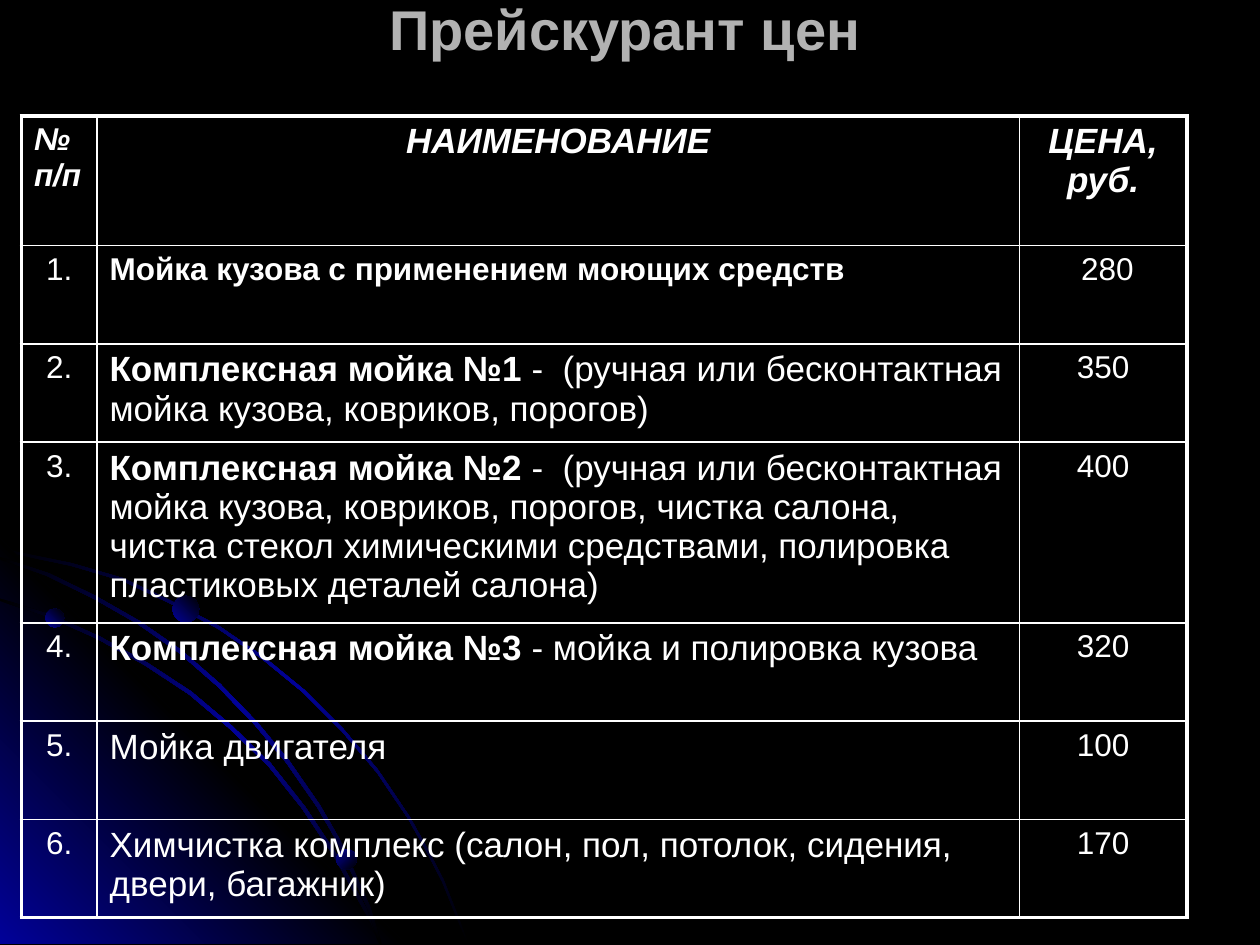
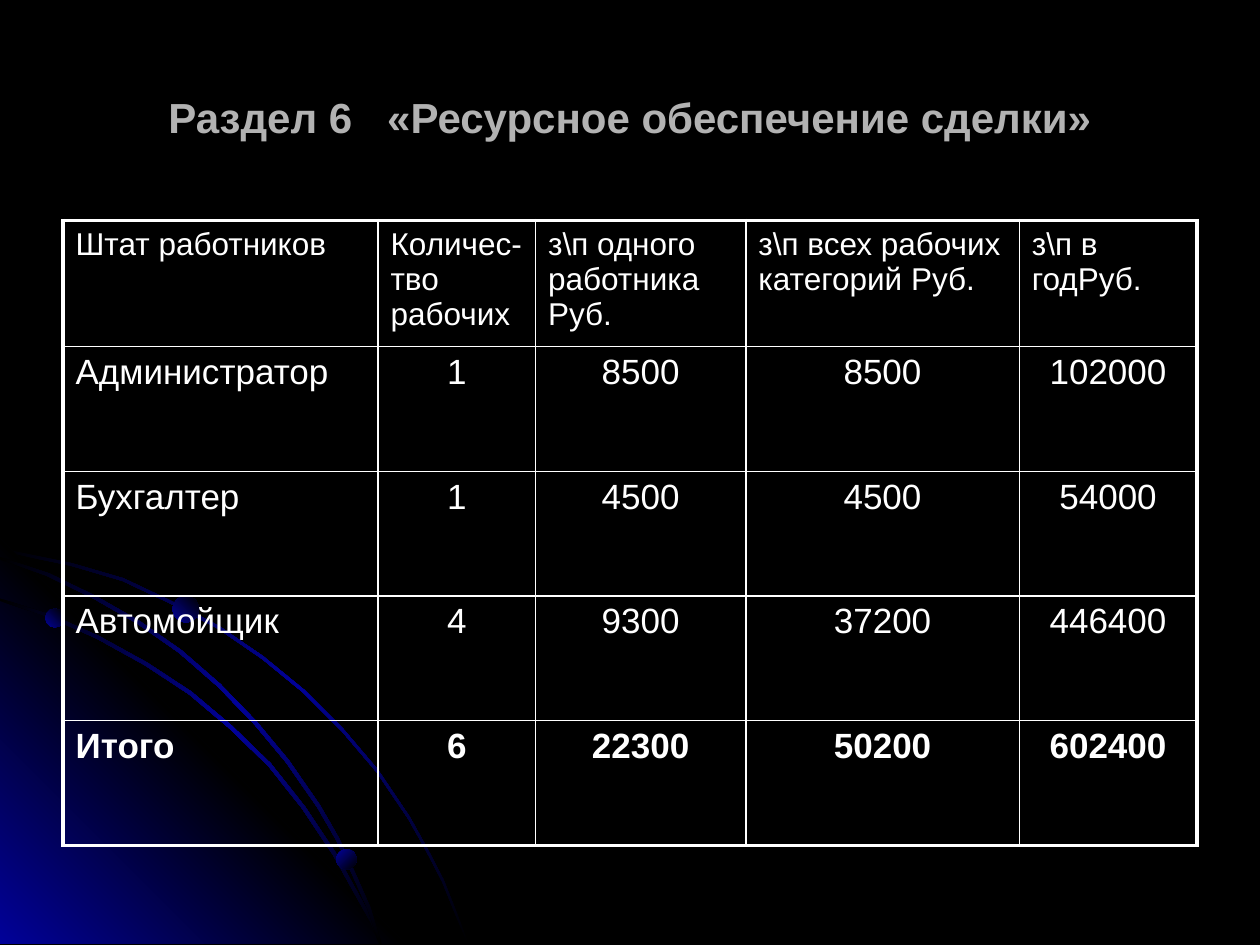
from lxml import etree
from pptx import Presentation
from pptx import util as u
from pptx.dml.color import RGBColor
from pptx.enum import shapes, text
from pptx.oxml.ns import qn

PX = 9144  # 100 px to the inch
SLIDE_WIDTH, SLIDE_HEIGHT = 1000, 750
FONT = "Arial"
BLACK = RGBColor(0x00, 0x00, 0x00)
BLUE = RGBColor(0x01, 0x01, 0x99)
GRAY = RGBColor(0xB2, 0xB2, 0xB2)
WHITE = RGBColor(0xFF, 0xFF, 0xFF)
LEFT, CENTER = text.PP_ALIGN.LEFT, text.PP_ALIGN.CENTER
OUTER_LINE, INNER_LINE = 2.25, 1
PLAIN_TABLE_STYLE = "{2D5ABB26-0587-4C30-8999-92F81FD0307C}"

# Background art: upper edge of each arc, its thickness, all relative to the art box
ART_BOX = (0, 427, 372, 322)
HIGH_ARC = [(0, 8), (28, 14), (57, 20), (98, 32), (136, 50), (174, 70), (209, 94),
            (242, 121), (272, 151), (300, 184), (325, 221), (339, 246), (352, 271),
            (362, 296), (372, 322)]
LOW_ARC = [(0, 48), (41, 61), (79, 78), (117, 99), (152, 122), (184, 149), (215, 179),
           (242, 213), (266, 249), (286, 285), (296, 303), (303, 322)]
MIDDLE_ARC = [(0, 15), (39, 28), (76, 46), (111, 66), (144, 89), (175, 116), (204, 146),
              (229, 176), (254, 212), (269, 238), (282, 266), (294, 293), (303, 322)]
BALLS = [(36, 56, 15, 315), (267, 247, 16, 45), (137, 46, 21, 315)]

PRICE_COLUMNS = [60, 732, 133]
PRICE_ROWS = [103, 78, 78, 134, 78, 78, 78]
PRICE_HEADER = ["№ п/п", "НАИМЕНОВАНИЕ", "ЦЕНА, руб."]
# Bold part of the service name, plain part, size, price
SERVICES = [
    ("Мойка кузова с применением моющих средств", "", 18, " 280"),
    ("Комплексная мойка №1",
     " -  (ручная или бесконтактная мойка кузова, ковриков, порогов)", 20, "350"),
    ("Комплексная мойка №2",
     " -  (ручная или бесконтактная мойка кузова, ковриков, порогов, чистка салона, "
     "чистка стекол химическими средствами, полировка пластиковых деталей салона)",
     20, "400"),
    ("Комплексная мойка №3", " - мойка и полировка кузова", 20, "320"),
    ("", "Мойка двигателя", 20, "100"),
    ("", "Химчистка комплекс (салон, пол, потолок, сидения, двери, багажник)", 20, "170"),
]

STAFF_COLUMNS = [250, 125, 167, 217, 141]
STAFF_ROW_HEIGHT = 99
STAFF = [
    ["Штат работников", "Количес-тво рабочих", "з\\п одного работника Руб.",
     "з\\п всех рабочих категорий Руб.", "з\\п в годРуб."],
    ["Администратор", "1", "8500", "8500", "102000"],
    ["Бухгалтер", "1", "4500", "4500", "54000"],
    ["Автомойщик", "4", "9300", "37200", "446400"],
    ["Итого", "6", "22300", "50200", "602400"],
]


def px(*lengths):
    return [u.Emu(length * PX) for length in lengths]


def format_run(run, size, color=WHITE, bold=False, italic=False):
    font = run.font
    font.name, font.size = FONT, u.Pt(size)
    font.bold, font.italic = bold, italic
    font.color.rgb = color


def write(frame, content, size, align=LEFT, **style):
    paragraph = frame.paragraphs[0]
    paragraph.text = content
    paragraph.alignment = align
    for run in paragraph.runs:
        format_run(run, size, **style)


def paint_gradient(shape, colors, angle):
    """Spread the colours evenly; the angle runs clockwise."""
    shape.shadow.inherit = False
    shape.line.fill.background()
    shape.fill.gradient()
    shape.fill.gradient_angle = 360 - angle
    stops = shape.element.spPr.find(qn("a:gradFill")).find(qn("a:gsLst"))
    for stop in list(stops):
        stops.remove(stop)
    for index, color in enumerate(colors):
        position = index * 100000 // (len(colors) - 1)
        stop = etree.SubElement(stops, qn("a:gs"), pos=str(position))
        etree.SubElement(stop, qn("a:srgbClr"), val=str(color))


def add_outline(slide, box, points, colors, angle):
    builder = slide.shapes.build_freeform(*points[0], scale=PX)
    builder.add_line_segments(points[1:], close=True)
    paint_gradient(builder.convert_to_shape(*px(*box[:2])), colors, angle)


def add_arc(slide, box, edge, shift_x, shift_y):
    lower_edge = [(max(x - shift_x, 0), min(y + shift_y, box[3])) for x, y in edge]
    add_outline(slide, box, edge + lower_edge[::-1], [BLACK, BLUE, BLACK], 45)


def add_art(slide, box):
    left, top, _, height = box
    add_arc(slide, box, HIGH_ARC, 1, 2)
    # Glowing corner
    corner = [(0, 0), (height, height), (0, height)]
    add_outline(slide, box, corner, [BLUE, BLACK, BLUE], 315)
    add_arc(slide, box, LOW_ARC, 2, 2)
    add_arc(slide, box, MIDDLE_ARC, 2, 2)
    for x, y, size, angle in BALLS:
        ball = slide.shapes.add_shape(shapes.MSO_SHAPE.OVAL,
                                      *px(left + x, top + y, size, size))
        paint_gradient(ball, [BLUE, BLACK], angle)


def add_title(slide, box, content, size):
    frame = slide.shapes.add_textbox(*px(*box)).text_frame
    frame.word_wrap = True
    frame.vertical_anchor = text.MSO_ANCHOR.MIDDLE
    write(frame, content, size, CENTER, color=GRAY, bold=True)


def set_border(cell, side, width):
    properties = cell._tc.get_or_add_tcPr()
    line = etree.SubElement(properties, qn("a:ln" + side), w=str(u.Pt(width)))
    fill = etree.SubElement(line, qn("a:solidFill"))
    etree.SubElement(fill, qn("a:srgbClr"), val=str(WHITE))


def add_grid(slide, left, top, columns, rows):
    """Add an unfilled table with a thick frame and thin inner lines."""
    frame = slide.shapes.add_table(len(rows), len(columns),
                                   *px(left, top, sum(columns), sum(rows)))
    table = frame.table
    table.first_row = table.horz_banding = False
    table._tbl.tblPr.find(qn("a:tableStyleId")).text = PLAIN_TABLE_STYLE
    for column, width in zip(table.columns, columns):
        column.width = u.Emu(width * PX)
    for row, height in zip(table.rows, rows):
        row.height = u.Emu(height * PX)
    last_row, last_column = len(rows) - 1, len(columns) - 1
    for r in range(len(rows)):
        for c in range(len(columns)):
            cell = table.cell(r, c)
            on_frame = {"L": c == 0, "R": c == last_column, "T": r == 0, "B": r == last_row}
            for side, is_outer in on_frame.items():
                set_border(cell, side, OUTER_LINE if is_outer else INNER_LINE)
            cell.fill.background()
    return table


def add_price_table(slide, left, top):
    table = add_grid(slide, left, top, PRICE_COLUMNS, PRICE_ROWS)
    for c, heading in enumerate(PRICE_HEADER):
        size, align = (20, CENTER) if c else (18, LEFT)
        write(table.cell(0, c).text_frame, heading, size, align, bold=True, italic=True)
    for r, (name, details, size, price) in enumerate(SERVICES, start=1):
        write(table.cell(r, 0).text_frame, f"{r}.", 18, CENTER)
        service = table.cell(r, 1).text_frame
        write(service, name or details, size, bold=bool(name))
        if name and details:
            run = service.paragraphs[0].add_run()
            run.text = details
            format_run(run, size)
        write(table.cell(r, 2).text_frame, price, 18, CENTER)


def add_staff_table(slide, left, top):
    table = add_grid(slide, left, top, STAFF_COLUMNS, [STAFF_ROW_HEIGHT] * len(STAFF))
    for r, values in enumerate(STAFF):
        for c, value in enumerate(values):
            write(table.cell(r, c).text_frame, value, 20 if r else 18,
                  CENTER if r and c else LEFT, bold=r == len(STAFF) - 1)


def add_slide(presentation):
    slide = presentation.slides.add_slide(presentation.slide_layouts[6])
    add_art(slide, ART_BOX)
    return slide


def build_price_slide(presentation):
    slide = add_slide(presentation)
    add_title(slide, (50, 0, 892, 45), "Прейскурант цен", 32)
    add_price_table(slide, 17, 92)


def build_staff_slide(presentation):
    slide = add_slide(presentation)
    add_title(slide, (50, 30, 900, 125), "Раздел 6   «Ресурсное обеспечение сделки»", 24)
    add_staff_table(slide, 50, 175)


def main():
    presentation = Presentation()
    presentation.slide_width, presentation.slide_height = px(SLIDE_WIDTH, SLIDE_HEIGHT)
    background = presentation.slide_master.background.fill
    background.solid()
    background.fore_color.rgb = BLACK
    build_price_slide(presentation)
    build_staff_slide(presentation)
    presentation.save("out.pptx")


if __name__ == "__main__":
    main()
